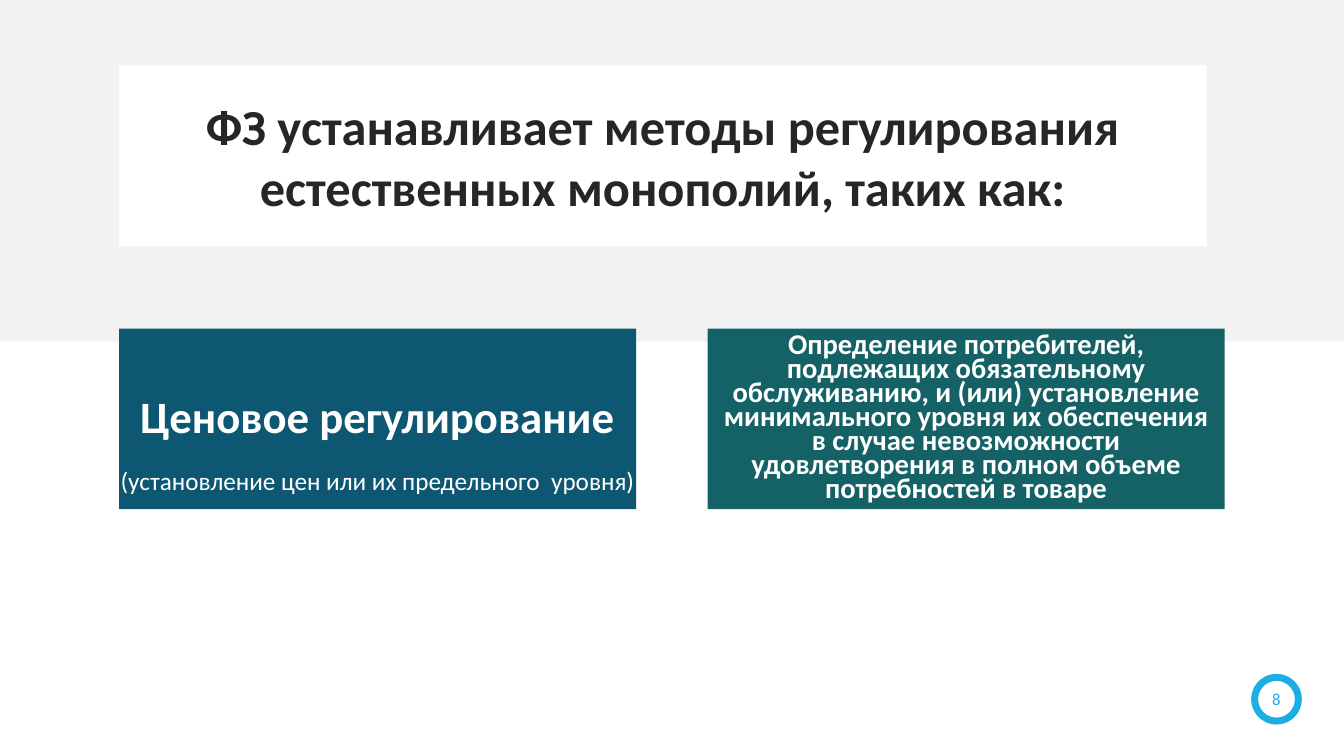
import pptx
import pptx.dml.color
import pptx.enum.shapes
import pptx.enum.text
import pptx.oxml
import pptx.oxml.ns
import pptx.util

Cm, Pt = pptx.util.Cm, pptx.util.Pt
MIDDLE = pptx.enum.text.MSO_ANCHOR.MIDDLE
TOP = pptx.enum.text.MSO_ANCHOR.TOP
SHAPES = pptx.enum.shapes.MSO_SHAPE

HEADING = "ФЗ устанавливает методы регулирования естественных монополий, таких как:"
# placeholder index, wording, fill, text size, line spacing
METHODS = [
    (1, "Ценовое регулирование", "0E5772", 32, 0.9),
    (3, "Определение потребителей, подлежащих обязательному обслуживанию, "
        "и (или) установление минимального уровня их обеспечения в случае "
        "невозможности удовлетворения в полном объеме потребностей в товаре",
     "146266", 20.4, 0.7),
]
PRICE_NOTE = "(установление цен или их предельного  уровня)"
PAGE = "8"

WHITE, BAND_GREY, INK, ACCENT = "FFFFFF", "F2F2F2", "262626", "1CADE4"
SLIDE_W, SLIDE_H, BAND_H = 33.87, 19.05, 8.61
LEFT, BOX_H = 3.0, 4.55
METHOD_TOP, METHOD_W, METHOD_GAP = 8.28, 13.03, 1.8
NOTE_OVERHANG = 0.28


def rgb(value):
    return pptx.dml.color.RGBColor.from_string(value)


def place(shape, left, top, width, height):
    shape.left, shape.top = Cm(left), Cm(top)
    shape.width, shape.height = Cm(width), Cm(height)


def paint(shape, fill, line=None, line_width=0):
    shape.fill.solid()
    shape.fill.fore_color.rgb = rgb(fill)
    if line:
        shape.line.color.rgb = rgb(line)
        shape.line.width = Pt(line_width)
    else:
        shape.line.fill.background()


def write(shape, text, size, colour, bold=False, spacing=1.0, before=0, anchor=MIDDLE):
    """Put one centred, unbulleted paragraph into the shape."""
    frame = shape.text_frame
    frame.word_wrap = True
    frame.auto_size = pptx.enum.text.MSO_AUTO_SIZE.NONE
    frame.vertical_anchor = anchor
    paragraph = frame.paragraphs[0]
    paragraph.alignment = pptx.enum.text.PP_ALIGN.CENTER
    paragraph.line_spacing = spacing
    paragraph.space_before = Pt(before)
    properties = paragraph._p.get_or_add_pPr()
    properties.set("marL", "0")
    properties.set("indent", "0")
    properties.append(pptx.oxml.parse_xml(
        "<a:buNone %s/>" % pptx.oxml.ns.nsdecls("a")))
    run = paragraph.add_run()
    run.text = text
    run.font.name = "Calibri"
    run.font.size = Pt(size)
    run.font.bold = bold
    run.font.color.rgb = rgb(colour)


def main():
    deck = pptx.Presentation()
    deck.slide_width, deck.slide_height = Cm(SLIDE_W), Cm(SLIDE_H)
    slide = deck.slides.add_slide(deck.slide_layouts.get_by_name("Comparison"))
    bodies = {body.placeholder_format.idx: body for body in slide.placeholders}
    heading = slide.shapes.title

    band = slide.shapes.add_shape(SHAPES.RECTANGLE, 0, 0, Cm(SLIDE_W), Cm(BAND_H))
    band.shadow.inherit = False
    paint(band, BAND_GREY)
    heading.element.addprevious(band.element)  # behind the placeholders

    place(heading, LEFT, 1.65, 27.41, BOX_H)
    paint(heading, WHITE)
    write(heading, HEADING, 36, INK, bold=True)

    for column, (index, wording, fill, size, spacing) in enumerate(METHODS):
        method = bodies[index]
        place(method, LEFT + column * (METHOD_W + METHOD_GAP), METHOD_TOP, METHOD_W, BOX_H)
        paint(method, fill)
        write(method, wording, size, WHITE, bold=True, spacing=spacing, before=10)

    note = bodies[2]
    place(note, LEFT - NOTE_OVERHANG, 11.68, METHOD_W + 2 * NOTE_OVERHANG, 2.29)
    write(note, PRICE_NOTE, 18, WHITE, spacing=0.9, before=10, anchor=TOP)
    note.element.getparent().append(note.element)  # above the first method

    unused = bodies[4].element
    unused.getparent().remove(unused)

    badge = slide.shapes.add_shape(SHAPES.OVAL, Cm(31.62), Cm(17.07), Cm(1.1), Cm(1.1))
    badge.shadow.inherit = False
    paint(badge, WHITE, ACCENT, 5)
    frame = badge.text_frame
    frame.margin_left = frame.margin_right = frame.margin_top = frame.margin_bottom = 0
    write(badge, PAGE, 12, ACCENT)

    deck.save("out.pptx")


if __name__ == "__main__":
    main()
